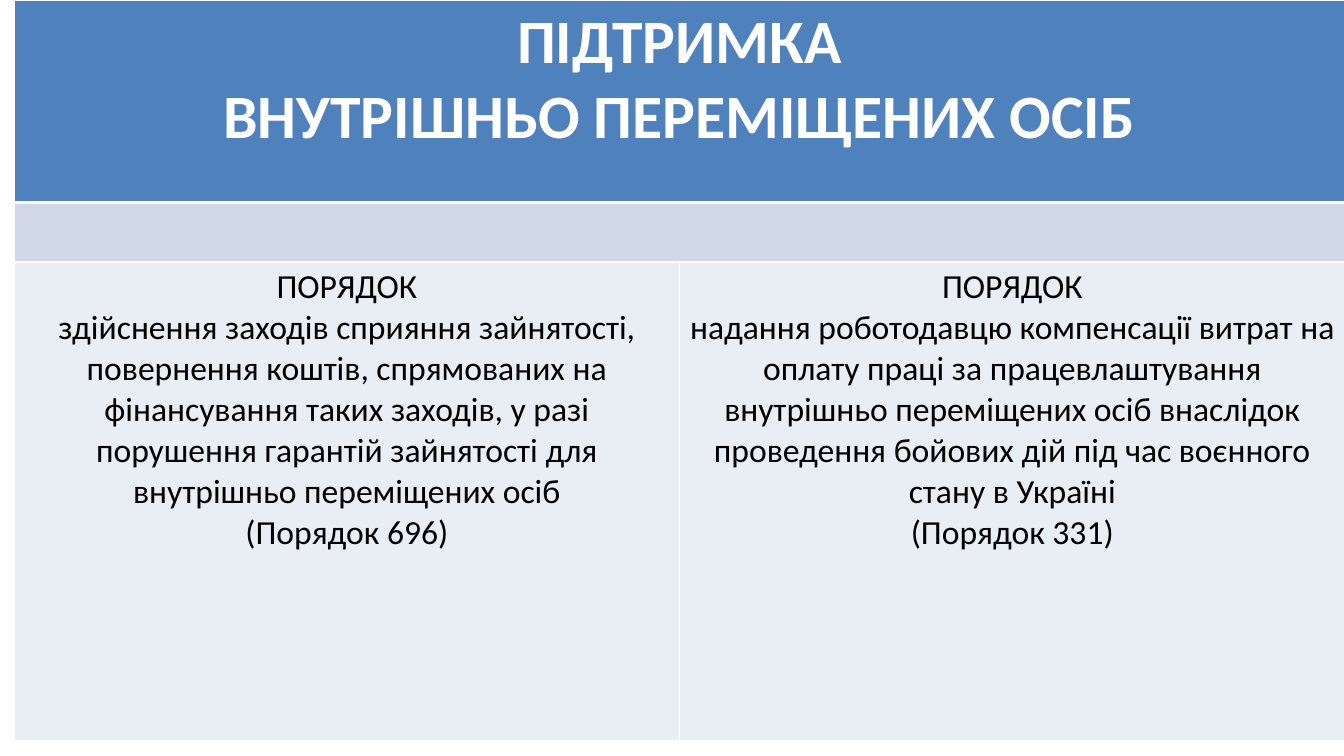
from lxml import etree
from pptx import Presentation
from pptx.dml.color import RGBColor
from pptx.enum.text import PP_ALIGN
from pptx.oxml.ns import qn
from pptx.util import Emu, Pt

PX = 9144
CENTER = PP_ALIGN.CENTER
BLANK_LAYOUT = 6
COLORS = {
    "header": "4F81BD",
    "band": "D0D8E8",
    "body": "E9EDF4",
    "border": "FFFFFF",
    "header_text": "FFFFFF",
    "body_text": "000000",
}
HEADER_FORMAT = {"name": "Calibri", "size": Pt(44), "bold": True}
BODY_FORMAT = {"name": "Calibri", "size": Pt(24), "bold": False}

# Each paragraph is a list of lines separated by line breaks.
HEADING = [["ПІДТРИМКА"], ["ВНУТРІШНЬО ПЕРЕМІЩЕНИХ ОСІБ"]]
PROCEDURES = [
    [["ПОРЯДОК",
      "здійснення заходів сприяння зайнятості, повернення коштів, "
      "спрямованих на фінансування таких заходів, у разі порушення "
      "гарантій зайнятості для внутрішньо переміщених осіб"],
     ["(Порядок 696)"]],
    [["ПОРЯДОК",
      "надання роботодавцю компенсації витрат на оплату праці за "
      "працевлаштування внутрішньо переміщених осіб внаслідок проведення "
      "бойових дій під час воєнного стану в Україні"],
     ["(Порядок 331)"]],
]


def px(length):
    return Emu(length * PX)


def write_cell(cell, paragraphs, font_format, color):
    frame = cell.text_frame
    for index, lines in enumerate(paragraphs):
        para = frame.add_paragraph() if index else frame.paragraphs[0]
        para.alignment = CENTER
        for number, line in enumerate(lines):
            if number:
                para.add_line_break()
            span = para.add_run()
            span.text = line
            for name, value in font_format.items():
                setattr(span.font, name, value)
            span.font.color.rgb = RGBColor.from_string(COLORS[color])


def paint_cell(cell, fill, top=1, bottom=1):
    """Fill the cell and draw its borders; top and bottom are widths in points."""
    cell.fill.solid()
    cell.fill.fore_color.rgb = RGBColor.from_string(COLORS[fill])
    properties = cell._tc.get_or_add_tcPr()
    widths = {"a:lnL": 1, "a:lnR": 1, "a:lnT": top, "a:lnB": bottom}
    for position, (tag, width) in enumerate(widths.items()):
        line = etree.Element(qn(tag), w=str(Pt(width)))
        solid = etree.SubElement(line, qn("a:solidFill"))
        etree.SubElement(solid, qn("a:srgbClr"), val=COLORS["border"])
        properties.insert(position, line)


def add_support_table(page, left, top, column_width, row_heights):
    columns = len(PROCEDURES)
    table = page.shapes.add_table(
        len(row_heights), columns, px(left), px(top),
        px(column_width * columns), px(sum(row_heights))).table
    for column in table.columns:
        column.width = px(column_width)
    for row, height in zip(table.rows, row_heights):
        row.height = px(height)

    row_looks = [
        {"fill": "header", "bottom": 3},
        {"fill": "band", "top": 3},
        {"fill": "body"},
    ]
    for row, look in zip(table.rows, row_looks):
        for cell in row.cells:
            paint_cell(cell, **look)
    for index in (0, 1):
        table.cell(index, 0).merge(table.cell(index, columns - 1))

    write_cell(table.cell(0, 0), HEADING, HEADER_FORMAT, "header_text")
    for index, procedure in enumerate(PROCEDURES):
        write_cell(table.cell(2, index), procedure, BODY_FORMAT, "body_text")


def main():
    deck = Presentation()
    deck.slide_width, deck.slide_height = px(1333), px(750)
    page = deck.slides.add_slide(deck.slide_layouts[BLANK_LAYOUT])
    add_support_table(page, 14, 0, 660, [201, 59, 475])
    deck.save("out.pptx")


if __name__ == "__main__":
    main()
